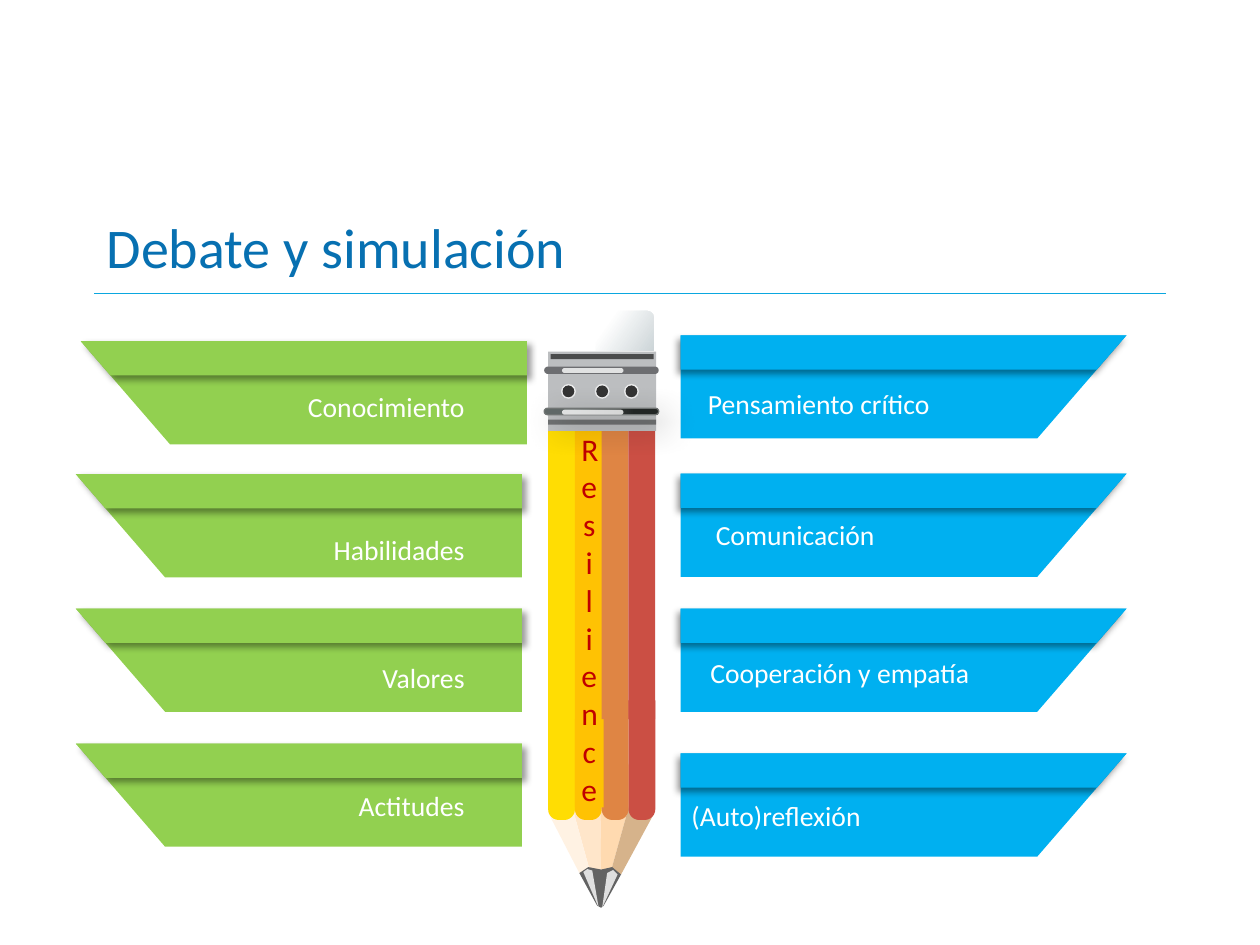
from lxml.etree import SubElement
from pptx import Presentation
from pptx.dml.color import RGBColor
from pptx.enum.shapes import MSO_CONNECTOR, MSO_SHAPE
from pptx.enum.text import MSO_ANCHOR, PP_ALIGN
from pptx.oxml.ns import qn
from pptx.util import Cm, Pt

COLORS = {
    "title": "0770B1", "rule": "0BA7DF", "green": "92D050", "blue": "00B0F0",
    "white": "FFFFFF", "black": "000000", "letters": "C00000",
    "yellow": "FFDD03", "amber": "FFC203", "orange": "DF8544", "red": "CB4F44",
    "wood_pale": "FFF2E3", "wood_light": "FFE6CA", "wood": "FFDAB0", "wood_dark": "D6B38B",
    "graphite": "636363", "metal": "BCBEC0", "groove": "6D6E71", "ring": "E6E7E8",
    "groove_line": "707473", "groove_light": "606867", "groove_dark": "222625",
    "eraser_shade": "CDD5D8",
}
FONT = "Calibri"
TITLE = "Debate y simulación"
LETTERS = "Res\ni\vl\vience"

LEFT_BANNERS = [
    ("Conocimiento", 10.62, 6.88, 7.77),
    ("Habilidades", 10.52, 9.56, 10.64),
    ("Valores", 10.52, 12.27, 13.23),
    ("Actitudes", 10.52, 14.99, 15.8),
]
RIGHT_BANNERS = [
    ("Pensamiento crítico", 6.76, (14.17, 7.7, 4.88)),
    ("Comunicación", 9.55, (14.33, 10.34, 7.21)),
    ("Cooperación y empatía", 12.27, (14.22, 13.13, 6.53)),
    ("(Auto)reflexión", 15.19, (13.84, 16, 3.81)),
]
RIGHT_EDGE = 13.72
BANNER_WIDTH, BANNER_HEIGHT, BAND_HEIGHT, BANNER_CUT = 8.99, 2.08, 0.69, 1.8
LABEL_HEIGHT, LABEL_INSET = 0.86, 0.1

STRIPES = ["yellow", "amber", "orange", "red"]
STRIPE_LEFT, STRIPE_STEP, STRIPE_WIDTH = 11.05, 0.54, 0.54
CONE = [
    ("wood_light", 100, [(12.12, 17.53), (12.09, 15.37), (11.56, 15.37), (11.38, 15.7), (11.89, 17.55)]),
    ("wood", 100, [(12.32, 17.55), (12.83, 15.72), (12.65, 15.37), (12.09, 15.37), (12.12, 17.53)]),
    ("wood_dark", 100, [(12.52, 17.63), (13.18, 16.41), (12.83, 15.72), (12.32, 17.55)]),
    ("wood_pale", 100, [(11.38, 15.7), (11.05, 16.38), (11.68, 17.6), (11.89, 17.55)]),
    ("graphite", 100, [(11.68, 17.6), (12.04, 18.26), (12.12, 18.3), (12.17, 18.26),
                       (12.52, 17.63), (12.34, 17.48), (12.12, 17.53), (11.86, 17.48)]),
]
GLINTS = [
    ("white", 80, [(12.45, 17.63), (12.14, 18.3), (12.24, 17.6), (12.36, 17.54)]),
    ("white", 80, [(11.76, 17.58), (12.07, 18.3), (11.94, 17.55), (11.84, 17.52)]),
]
RECT, PILL = MSO_SHAPE.RECTANGLE, MSO_SHAPE.ROUNDED_RECTANGLE
CAP = MSO_SHAPE.ROUND_2_SAME_RECTANGLE
FERRULE = [
    (CAP, (11.07, 6.22, 2.13, 1.6), "white", 100),
    (RECT, (11.05, 7.09, 2.18, 1.6), "metal", 100),
    (PILL, (10.97, 7.39, 2.31, 0.15), "groove", 100),
    (RECT, (11.1, 7.14, 2.08, 0.1), "black", 60),
    (RECT, (11.05, 8.46, 2.18, 0.1), "black", 40),
]
LOWER_GROOVE = (10.97, 8.23, 2.31, 0.13)
SHINES = [(11.33, 7.42, 1.24, 0.1), (11.33, 8.26, 1.24, 0.1)]
RIVETS, RIVET_Y = [12.14, 11.46, 12.73], 7.89
RIVET_PARTS = [
    (MSO_SHAPE.OVAL, 0.28, "white", 100),
    (MSO_SHAPE.DONUT, 0.3, "ring", 100),
    (MSO_SHAPE.OVAL, 0.24, "black", 80),
]
ERASER = (12.01, 6.27, 1.17, 0.8)


def color(name):
    return RGBColor.from_string(COLORS[name])


def paint(shape, fill, opacity=100):
    shape.shadow.inherit = False
    shape.line.fill.background()
    shape.fill.solid()
    shape.fill.fore_color.rgb = color(fill)
    if opacity < 100:
        tint = shape.element.spPr.find(qn("a:solidFill")).find(qn("a:srgbClr"))
        SubElement(tint, qn("a:alpha"), val=str(opacity * 1000))
    return shape


def blend(shape, stops, angle):
    shape.fill.gradient()
    shape.fill.gradient_angle = angle
    for stop, (position, name) in zip(shape.fill.gradient_stops, stops):
        stop.position = position
        stop.color.rgb = color(name)


def cast_shadow(shape, blur, distance, angle):
    effects = shape.element.spPr.find(qn("a:effectLst"))
    outer = SubElement(effects, qn("a:outerShdw"), blurRad=str(Pt(blur)),
                       dist=str(Pt(distance)), dir=str(angle * 60000),
                       algn="tl", rotWithShape="0")
    tint = SubElement(outer, qn("a:srgbClr"), val=COLORS["black"])
    SubElement(tint, qn("a:alpha"), val="40000")


def add_polygon(group, points, fill, opacity=100):
    corners = [(Cm(x), Cm(y)) for x, y in points]
    builder = group.shapes.build_freeform(*corners[0])
    builder.add_line_segments(corners[1:], close=True)
    return paint(builder.convert_to_shape(), fill, opacity)


def add_preset(group, kind, place, fill, opacity=100):
    shape = group.shapes.add_shape(kind, *map(Cm, place))
    if kind == PILL:
        shape.adjustments[0] = 0.5
    return paint(shape, fill, opacity)


def add_text(page, text, place, size, name, align=PP_ALIGN.LEFT):
    box = page.shapes.add_textbox(*map(Cm, place))
    box.text_frame.word_wrap = True
    paragraph = box.text_frame.paragraphs[0]
    paragraph.text = text
    paragraph.alignment = align
    paragraph.font.name, paragraph.font.size = FONT, Pt(size)
    paragraph.font.color.rgb = color(name)
    return box.text_frame


def add_label(page, text, place, align):
    frame = add_text(page, text, (*place, LABEL_HEIGHT), 15.8, "white", align)
    frame.margin_left = frame.margin_right = Cm(LABEL_INSET)
    frame.margin_top = frame.margin_bottom = Cm(LABEL_INSET)


def add_banner(page, edge, top, direction, fill, shadow_angle):
    group = page.shapes.add_group_shape()
    for height in (BANNER_HEIGHT, BAND_HEIGHT):
        short = BANNER_WIDTH - BANNER_CUT * height / BANNER_HEIGHT
        part = add_polygon(group, [
            (edge, top), (edge + direction * BANNER_WIDTH, top),
            (edge + direction * short, top + height), (edge, top + height)], fill)
    cast_shadow(part, 4, 3, shadow_angle)


def add_pencil(page):
    pencil = page.shapes.add_group_shape()
    for fill, opacity, points in CONE:
        add_polygon(pencil, points, fill, opacity)
    lefts = [STRIPE_LEFT + STRIPE_STEP * index for index in range(len(STRIPES))]
    for left, fill in zip(lefts, STRIPES):
        tip = add_preset(pencil, CAP, (left, 14.12, STRIPE_WIDTH, 2.41), fill)
        tip.rotation = 180
        tip.adjustments[0] = 0.4
    for left, fill in zip(lefts, STRIPES):
        if fill == "amber":
            add_letters(add_preset(pencil, RECT, (left, 8.66, 0.58, 7.62), fill))
        else:
            add_preset(pencil, RECT, (left, 7.26, STRIPE_WIDTH, 7.24), fill)
    for fill, opacity, points in GLINTS:
        add_polygon(pencil, points, fill, opacity)
    for kind, place, fill, opacity in FERRULE:
        add_preset(pencil, kind, place, fill, opacity)
    groove = add_preset(pencil, PILL, LOWER_GROOVE, "groove")
    blend(groove, [(0.24, "groove_light"), (0.79, "groove_dark")], 0)
    groove.line.color.rgb = color("groove_line")
    groove.line.width = Pt(0.75)
    cast_shadow(groove, 19, 8, 45)
    for place in SHINES:
        add_preset(pencil, PILL, place, "white", 80)
    for center in RIVETS:
        for kind, size, fill, opacity in RIVET_PARTS:
            place = (center - size / 2, RIVET_Y - size / 2, size, size)
            rivet = add_preset(pencil, kind, place, fill, opacity)
            if kind == MSO_SHAPE.DONUT:
                rivet.adjustments[0] = 0.06
    eraser = add_preset(pencil, CAP, ERASER, "white")
    blend(eraser, [(0.23, "white"), (1, "eraser_shade")], 325)


def add_letters(stripe):
    frame = stripe.text_frame
    frame.word_wrap = True
    frame.vertical_anchor = MSO_ANCHOR.MIDDLE
    frame.margin_left = frame.margin_right = Cm(0.13)
    frame.margin_top = frame.margin_bottom = Cm(0.13)
    frame.text = LETTERS
    for paragraph in frame.paragraphs:
        paragraph.alignment = PP_ALIGN.CENTER
        paragraph.font.name, paragraph.font.size = FONT, Pt(18)
        paragraph.font.color.rgb = color("letters")


def main():
    deck = Presentation()
    deck.slide_width, deck.slide_height = Cm(25.4), Cm(19.05)
    page = deck.slides.add_slide(deck.slide_layouts[6])
    rule = page.shapes.add_connector(MSO_CONNECTOR.STRAIGHT, Cm(1.9), Cm(5.92), Cm(23.5), Cm(5.92))
    rule.line.color.rgb = color("rule")
    rule.line.width = Pt(0.75)
    SubElement(rule.element.spPr, qn("a:effectLst"))
    for text, edge, top, label_top in LEFT_BANNERS:
        add_banner(page, edge, top, -1, "green", 45)
        add_label(page, text, (3.76, label_top, 5.71), PP_ALIGN.RIGHT)
    for text, top, place in RIGHT_BANNERS:
        add_banner(page, RIGHT_EDGE, top, 1, "blue", 129)
        add_label(page, text, place, PP_ALIGN.LEFT)
    add_pencil(page)
    title = add_text(page, TITLE, (1.9, 4.01, 21.6, 1.9), 32, "title")
    title.vertical_anchor = MSO_ANCHOR.MIDDLE
    deck.save("out.pptx")


if __name__ == "__main__":
    main()
